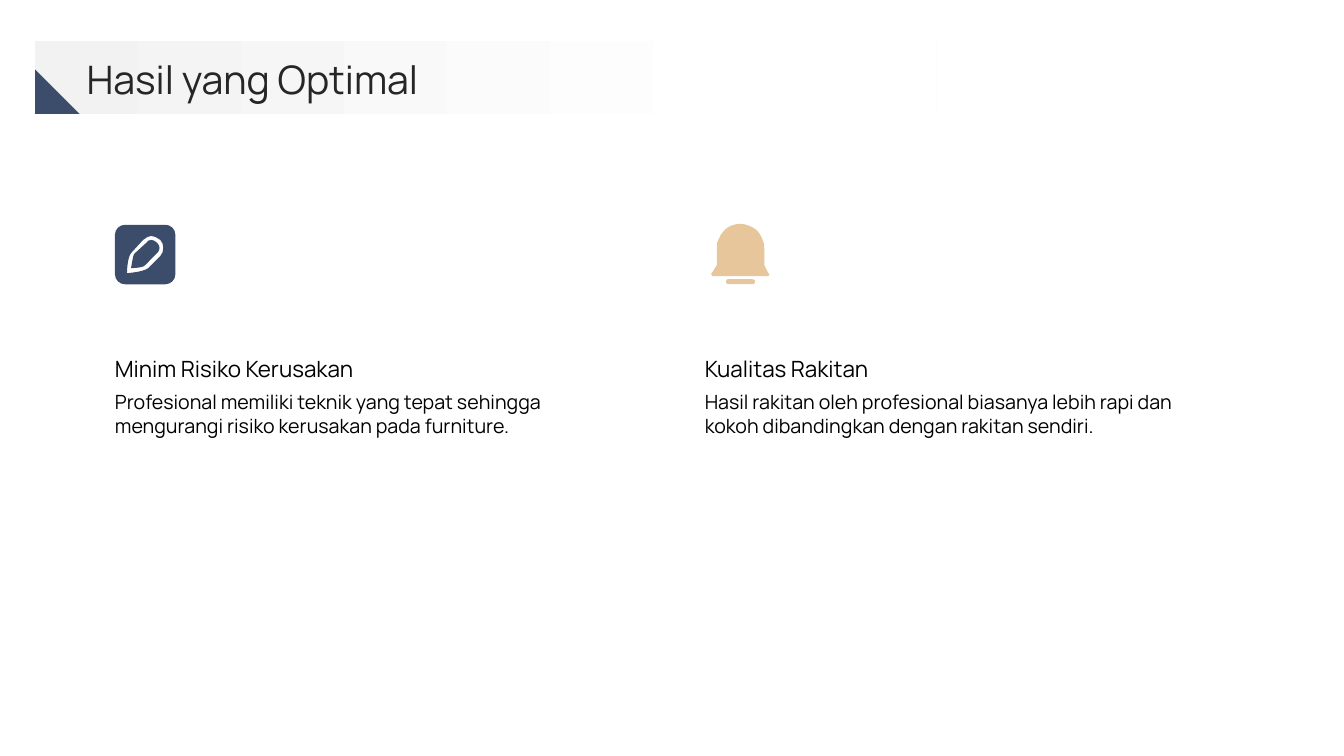
from dataclasses import dataclass

from pptx import Presentation, util as u
from pptx.dml.color import RGBColor
from pptx.enum import shapes, text
from pptx.oxml import ns, xmlchemy as xml

FONT = "Manrope"
NAVY, SAND, BLACK, DARK = "3C4C6B", "E6C69A", "000000", "262626"
TOP, MID = text.MSO_ANCHOR.TOP, text.MSO_ANCHOR.MIDDLE
BASE = text.MSO_ANCHOR.BOTTOM

# A contour is its first point, then parts: 2 numbers for a line, 6 for a curve.
Contour = list[tuple[float, ...]]


@dataclass
class Card:
    left: float
    head: str
    body: str
    icon: list[Contour]
    color: str


PENCIL: list[Contour] = [
    [(1.5, 2.38), (1.52, 2.38, 1.54, 2.39, 1.56, 2.41),
     (1.59, 2.44, 1.59, 2.48, 1.56, 2.51), (1.44, 2.63),
     (1.43, 2.65, 1.36, 2.66, 1.3, 2.66), (1.31, 2.6, 1.32, 2.54, 1.33, 2.52),
     (1.45, 2.41), (1.46, 2.39, 1.48, 2.38, 1.5, 2.38)],
    [(1.5, 2.34), (1.47, 2.34, 1.45, 2.36, 1.42, 2.38), (1.31, 2.5),
     (1.26, 2.54, 1.26, 2.71, 1.26, 2.71), (1.26, 2.71, 1.42, 2.7, 1.47, 2.66),
     (1.59, 2.54), (1.63, 2.5, 1.63, 2.42, 1.59, 2.38),
     (1.56, 2.36, 1.53, 2.34, 1.5, 2.34)],
    [(1.24, 2.23), (1.64, 2.23), (1.69, 2.23, 1.74, 2.27, 1.74, 2.33),
     (1.74, 2.72), (1.74, 2.78, 1.69, 2.82, 1.64, 2.82), (1.24, 2.82),
     (1.19, 2.82, 1.14, 2.78, 1.14, 2.72), (1.14, 2.33),
     (1.14, 2.27, 1.19, 2.23, 1.24, 2.23)],
]
BELL: list[Contour] = [
    [(7.22, 2.77), (7.46, 2.77), (7.48, 2.77, 7.49, 2.78, 7.49, 2.79),
     (7.49, 2.81, 7.48, 2.82, 7.46, 2.82), (7.22, 2.82),
     (7.21, 2.82, 7.2, 2.81, 7.2, 2.79), (7.2, 2.78, 7.21, 2.77, 7.22, 2.77)],
    [(7.34, 2.22), (7.37, 2.22, 7.4, 2.23, 7.43, 2.24),
     (7.46, 2.25, 7.49, 2.27, 7.51, 2.29), (7.53, 2.31, 7.55, 2.34, 7.56, 2.37),
     (7.57, 2.39, 7.58, 2.42, 7.58, 2.46), (7.58, 2.63), (7.62, 2.71),
     (7.63, 2.71, 7.63, 2.72, 7.63, 2.73), (7.62, 2.74, 7.61, 2.74, 7.61, 2.74),
     (7.08, 2.74), (7.07, 2.74, 7.06, 2.74, 7.06, 2.73),
     (7.05, 2.72, 7.05, 2.71, 7.06, 2.71), (7.11, 2.63), (7.11, 2.46),
     (7.11, 2.42, 7.11, 2.39, 7.13, 2.37), (7.14, 2.34, 7.16, 2.31, 7.18, 2.29),
     (7.2, 2.27, 7.22, 2.25, 7.25, 2.24), (7.28, 2.23, 7.31, 2.22, 7.34, 2.22)],
]
CARDS = [
    Card(1.14, "Minim Risiko Kerusakan",
         "Profesional memiliki teknik yang tepat sehingga mengurangi "
         "risiko kerusakan pada furniture.", PENCIL, NAVY),
    Card(6.99, "Kualitas Rakitan",
         "Hasil rakitan oleh profesional biasanya lebih rapi dan kokoh "
         "dibandingkan dengan rakitan sendiri.", BELL, SAND),
]


def rgb(color: str) -> RGBColor:
    return RGBColor.from_string(color)


def paint(shape, color: str) -> None:
    shape.shadow.inherit = False
    shape.fill.solid()
    shape.fill.fore_color.rgb = rgb(color)
    shape.line.fill.background()


def bend(shape, contours: list[Contour]) -> None:
    """Merge the three lines of each six-number part into one cubic curve."""
    lines = iter(list(shape.element.iter(ns.qn("a:lnTo"))))
    for contour in contours:
        for part in contour[1:]:
            group = [next(lines) for _ in range(len(part) // 2)]
            if len(group) == 1:
                continue
            curve = xml.OxmlElement("a:cubicBezTo")
            group[0].addprevious(curve)
            for line in group:
                curve.append(line[0])
                line.getparent().remove(line)


def add_icon(slide, contours: list[Contour], color: str) -> None:
    pen = None
    for contour in contours:
        flat = [u.Inches(value) for part in contour for value in part]
        start, *points = zip(flat[::2], flat[1::2])
        if pen is None:
            pen = slide.shapes.build_freeform(*start)
        else:
            pen.move_to(*start)
        pen.add_line_segments(points)
    icon = pen.convert_to_shape()
    bend(icon, contours)
    paint(icon, color)


def add_text(slide, box: tuple[float, ...], words: str, size: int,
             color: str, anchor=TOP) -> None:
    frame = slide.shapes.add_textbox(*map(u.Inches, box)).text_frame
    frame.word_wrap = True
    frame.vertical_anchor = anchor
    frame.margin_left = frame.margin_right = 0
    frame.margin_top = frame.margin_bottom = 0
    para = frame.paragraphs[0]
    para.text = words
    para.font.name = FONT
    para.font.size = u.Pt(size)
    para.font.color.rgb = rgb(color)


def add_title(slide) -> None:
    kind = shapes.MSO_SHAPE
    band = slide.shapes.add_shape(
        kind.ROUNDED_RECTANGLE, *map(u.Inches, (0.35, 0.41, 8.94, 0.72)))
    band.adjustments[0] = 0
    band.shadow.inherit = False
    band.line.fill.background()
    band.fill.gradient()
    band.fill.gradient_angle = 0
    for stop, spot, color in zip(band.fill.gradient_stops,
                                 (0, 0.8), ("F2F2F2", "FFFFFF")):
        stop.position = spot
        stop.color.rgb = rgb(color)
    add_text(slide, (0.86, 0.53, 11.67, 0.51), "Hasil yang Optimal", 28, DARK, MID)
    corner = slide.shapes.add_shape(
        kind.RIGHT_TRIANGLE, *map(u.Inches, (0.35, 0.69, 0.44, 0.44)))
    paint(corner, NAVY)


def main() -> None:
    deck = Presentation()
    deck.slide_width, deck.slide_height = u.Inches(13.33), u.Inches(7.5)
    slide = deck.slides.add_slide(deck.slide_layouts[6])
    for card in CARDS:
        add_icon(slide, card.icon, card.color)
        add_text(slide, (card.left, 2.97, 5.19, 0.82), card.head, 16, BLACK, BASE)
        add_text(slide, (card.left, 3.87, 5.19, 1.85), card.body, 14, BLACK)
    add_title(slide)
    deck.save("out.pptx")


if __name__ == "__main__":
    main()
